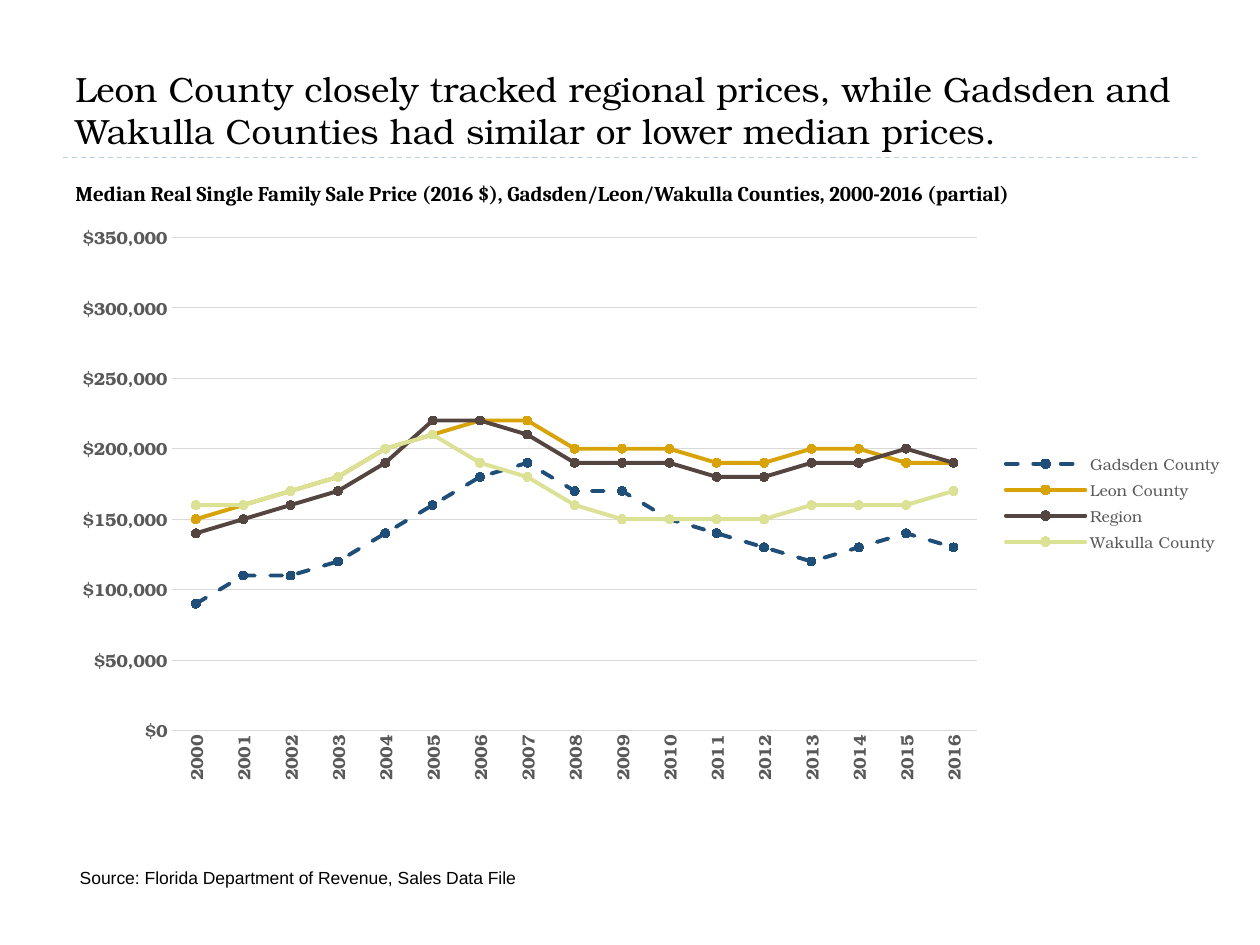
import pptx
import pptx.chart.data
import pptx.dml.color
import pptx.enum.chart
import pptx.enum.dml
import pptx.enum.shapes
import pptx.enum.text
import pptx.oxml
import pptx.oxml.ns
import pptx.util

Pt = pptx.util.Pt
DASH = pptx.enum.dml.MSO_LINE.DASH
ANCHOR = pptx.enum.text.MSO_ANCHOR
SERIF = "TeX Gyre Bonum"
GREY, GRID = "595959", "D9D9D9"
PRICE_FORMAT = '"$"#,##0'

TITLE = ("Leon County closely tracked regional prices, while Gadsden and "
         "Wakulla Counties had similar or lower median prices.")
SUBTITLE = ("Median Real Single Family Sale Price (2016 $), "
            "Gadsden/Leon/Wakulla Counties, 2000-2016 (partial)")
SOURCE = "Source: Florida Department of Revenue, Sales Data File"

YEARS = [str(year) for year in range(2000, 2017)]
# name, colour, dashed, median prices in thousands of dollars
COUNTIES = [
    ("Gadsden County", "1F4E79", True,
     [90, 110, 110, 120, 140, 160, 180, 190, 170, 170, 150, 140, 130, 120, 130, 140, 130]),
    ("Leon County", "D7A308", False,
     [150, 160, 170, 180, 200, 210, 220, 220, 200, 200, 200, 190, 190, 200, 200, 190, 190]),
    ("Region", "554540", False,
     [140, 150, 160, 170, 190, 220, 220, 210, 190, 190, 190, 180, 180, 190, 190, 200, 190]),
    ("Wakulla County", "DBE195", False,
     [160, 160, 170, 180, 200, 210, 190, 180, 160, 150, 150, 150, 150, 160, 160, 160, 170]),
]
# left, top, width, height; the plot area is measured from the chart's corner
CHART_BOX = (34, 121.7, 671.8, 331.2)
PLOT_BOX = (64.4, 13.9, 460, 282)


def rgb(color):
    return pptx.dml.color.RGBColor.from_string(color)


def set_font(font, name, size, color, bold=False):
    font.name, font.size, font.bold = name, Pt(size), bold
    font.color.rgb = rgb(color)


def set_line(line, color, width):
    line.color.rgb = rgb(color)
    line.width = Pt(width)


def add_text(slide, box, text, name, size, bold=False, anchor=ANCHOR.TOP):
    sp = slide.shapes.add_textbox(*map(Pt, box))
    tf = sp.text_frame
    tf.word_wrap = True
    tf.vertical_anchor = anchor
    r = tf.paragraphs[0].add_run()
    r.text = text
    set_font(r.font, name, size, "000000", bold)
    return sp


def add_divider(slide):
    divider = slide.shapes.add_connector(
        pptx.enum.shapes.MSO_CONNECTOR.STRAIGHT, Pt(36), Pt(90), Pt(684), Pt(90))
    set_line(divider.line, "9FB8CD", 0.75)
    divider.line.dash_style = DASH
    divider._element.spPr.append(
        pptx.oxml.parse_xml("<a:effectLst %s/>" % pptx.oxml.ns.nsdecls("a")))


def style_axis(axis):
    axis.major_tick_mark = axis.minor_tick_mark = pptx.enum.chart.XL_TICK_MARK.NONE
    set_font(axis.tick_labels.font, SERIF, 10, GREY, bold=True)


def fix_plot_area(chart):
    """Place the inner plot area at PLOT_BOX, as shares of the chart's size."""
    parts = "".join('<c:%sMode val="edge"/>' % k for k in "xy")
    for key, length, whole in zip("xywh", PLOT_BOX, CHART_BOX[2:] * 2):
        parts += '<c:%s val="%.4f"/>' % (key, length / whole)
    layout = pptx.oxml.parse_xml(
        '<c:layout %s><c:manualLayout><c:layoutTarget val="inner"/>%s'
        '</c:manualLayout></c:layout>' % (pptx.oxml.ns.nsdecls("c"), parts))
    plot_area = chart._chartSpace.chart.plotArea
    for old in plot_area.xpath("c:layout"):
        plot_area.remove(old)
    plot_area.insert(0, layout)


def add_price_chart(slide):
    data = pptx.chart.data.CategoryChartData(number_format=PRICE_FORMAT)
    data.categories = YEARS
    for name, _, _, prices in COUNTIES:
        data.add_series(name, [price * 1000 for price in prices])
    chart = slide.shapes.add_chart(
        pptx.enum.chart.XL_CHART_TYPE.LINE_MARKERS, *map(Pt, CHART_BOX), data).chart
    chart.has_title = False
    set_font(chart.font, SERIF, 10, "000000")

    chart.has_legend = True
    chart.legend.position = pptx.enum.chart.XL_LEGEND_POSITION.RIGHT
    chart.legend.include_in_layout = False
    set_font(chart.legend.font, SERIF, 9, GREY)

    years, prices = chart.category_axis, chart.value_axis
    style_axis(years)
    set_line(years.format.line, GRID, 0.75)
    for body in years._element.xpath("c:txPr/a:bodyPr"):
        body.set("rot", "-5400000")
    style_axis(prices)
    prices.format.line.fill.background()
    prices.minimum_scale, prices.maximum_scale, prices.major_unit = 0, 350000, 50000
    prices.tick_labels.number_format = PRICE_FORMAT
    prices.tick_labels.number_format_is_linked = False
    set_line(prices.major_gridlines.format.line, GRID, 0.75)

    plot = chart.plots[0]
    plot.vary_by_categories = False
    for series, (_, color, dashed, _) in zip(plot.series, COUNTIES):
        series.smooth = False
        set_line(series.format.line, color, 2.25)
        if dashed:
            series.format.line.dash_style = DASH
        marker = series.marker
        marker.style = pptx.enum.chart.XL_MARKER_STYLE.CIRCLE
        marker.size = 5
        marker.format.fill.solid()
        marker.format.fill.fore_color.rgb = rgb(color)
        set_line(marker.format.line, color, 0.75)
    for ln in chart._chartSpace.xpath(".//c:ser/c:spPr/a:ln"):
        ln.set("cap", "rnd")
    fix_plot_area(chart)


def main():
    prs = pptx.Presentation()
    prs.slide_width, prs.slide_height = Pt(720), Pt(540)
    slide = prs.slides.add_slide(prs.slide_layouts[6])
    add_divider(slide)
    title = add_text(slide, (36, 12.2, 648, 77.8), TITLE, SERIF, 20, anchor=ANCHOR.BOTTOM)
    title.fill.solid()
    title.fill.fore_color.rgb = rgb("FFFFFF")
    subtitle = add_text(slide, (36, 97.9, 630, 23.8), SUBTITLE, "Cambria", 12, bold=True)
    p = subtitle.text_frame.paragraphs[0]
    p.line_spacing = 1.12
    p.space_before = p.space_after = Pt(10)
    add_text(slide, (38.5, 491.8, 599.8, 19.4), SOURCE, "Arial", 10)
    add_price_chart(slide)
    prs.save("out.pptx")


if __name__ == "__main__":
    main()
